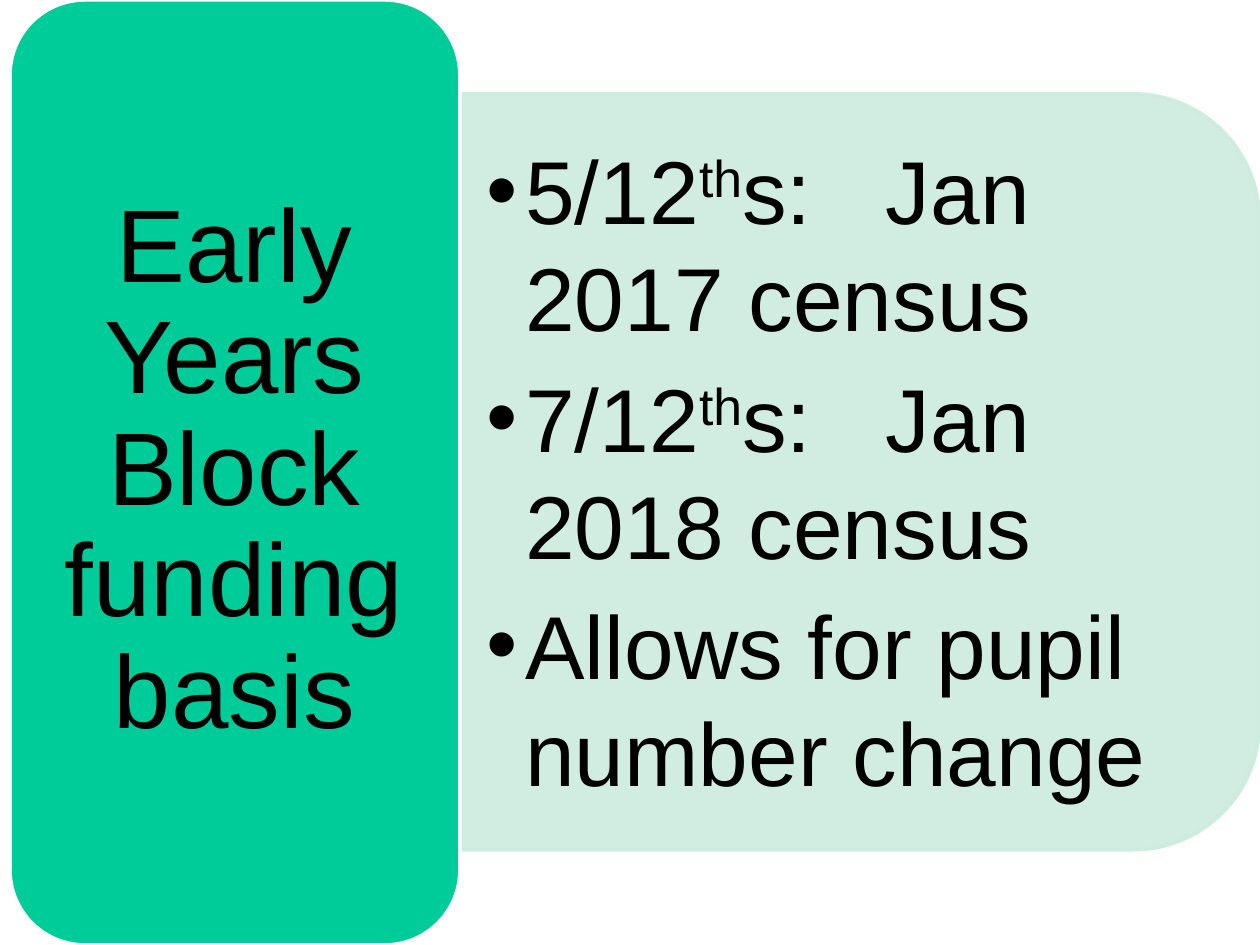
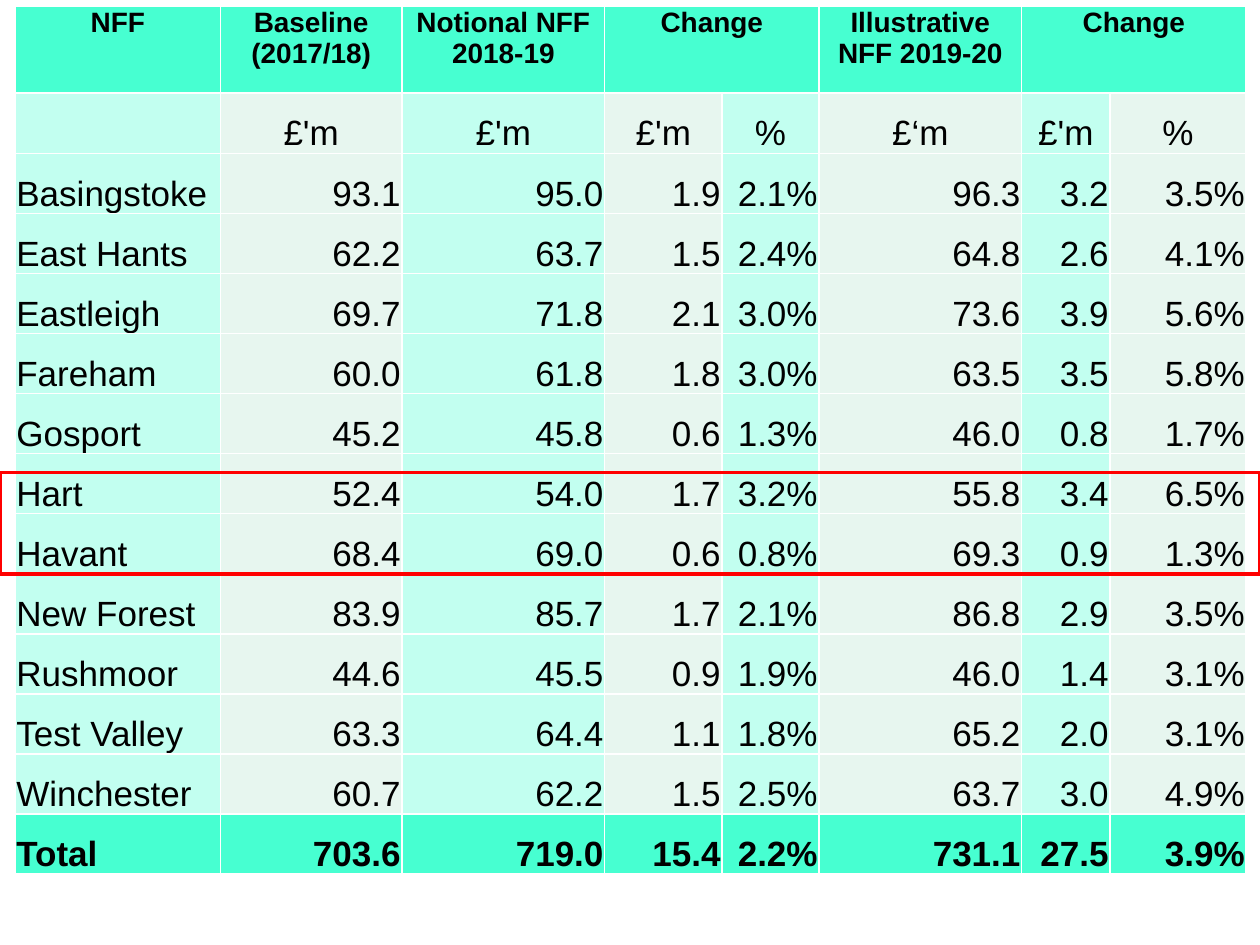
from lxml.etree import SubElement
from pptx import Presentation
from pptx.dml.color import RGBColor
from pptx.enum.shapes import MSO_SHAPE
from pptx.enum.text import MSO_ANCHOR, MSO_AUTO_SIZE, PP_ALIGN
from pptx.oxml import parse_xml
from pptx.oxml.ns import nsdecls, qn
from pptx.util import Inches, Pt

FONT = "Arial"
COLORS = {
    "text": "000000", "white": "FFFFFF", "green": "00CC99", "panel": "CCECDE",
    "strong": "47FFD1", "mint": "C2FFF0", "pale": "E7F6EF", "highlight": "FF0000",
}

BASIS_TITLE = "Early Years Block funding basis"
# Each point is a list of (text, is_superscript) pieces
BASIS_POINTS = [
    [("5/12", False), ("th", True), ("s:\tJan 2017 census", False)],
    [("7/12", False), ("th", True), ("s:\tJan 2018 census", False)],
    [("Allows for pupil number change", False)],
]

HEADINGS = ["NFF", "Baseline (2017/18)", "Notional NFF 2018-19", "Change", "",
            "Illustrative NFF 2019-20", "Change", ""]
CHANGE_COLUMNS = [3, 6]
UNITS = ["", "£'m", "£'m", "£'m", "%", "£‘m", "£'m", "%"]
DISTRICTS = [
    ["Basingstoke", "93.1", "95.0", "1.9", "2.1%", "96.3", "3.2", "3.5%"],
    ["East Hants", "62.2", "63.7", "1.5", "2.4%", "64.8", "2.6", "4.1%"],
    ["Eastleigh", "69.7", "71.8", "2.1", "3.0%", "73.6", "3.9", "5.6%"],
    ["Fareham", "60.0", "61.8", "1.8", "3.0%", "63.5", "3.5", "5.8%"],
    ["Gosport", "45.2", "45.8", "0.6", "1.3%", "46.0", "0.8", "1.7%"],
    ["Hart", "52.4", "54.0", "1.7", "3.2%", "55.8", "3.4", "6.5%"],
    ["Havant", "68.4", "69.0", "0.6", "0.8%", "69.3", "0.9", "1.3%"],
    ["New Forest", "83.9", "85.7", "1.7", "2.1%", "86.8", "2.9", "3.5%"],
    ["Rushmoor", "44.6", "45.5", "0.9", "1.9%", "46.0", "1.4", "3.1%"],
    ["Test Valley", "63.3", "64.4", "1.1", "1.8%", "65.2", "2.0", "3.1%"],
    ["Winchester", "60.7", "62.2", "1.5", "2.5%", "63.7", "3.0", "4.9%"],
]
TOTAL = ["Total", "703.6", "719.0", "15.4", "2.2%", "731.1", "27.5", "3.9%"]
FUNDING_ROWS = [HEADINGS, UNITS, *DISTRICTS, TOTAL]
COLUMN_WIDTHS = [1.63, 1.44, 1.61, 0.93, 0.77, 1.61, 0.7, 1.08]
TABLE_LEFT, TABLE_TOP, TABLE_HEIGHT = 0.12, 0.05, 6.89
HEADING_HEIGHT = 0.69
ROW_HEIGHT = (TABLE_HEIGHT - HEADING_HEIGHT) / (len(FUNDING_ROWS) - 1)
HIGHLIGHT_TOP = 3.75
LAST_HIGHLIGHTED = "Havant"


def rgb(name):
    return RGBColor.from_string(COLORS[name])


def inches(*values):
    return [Inches(value) for value in values]


def style_font(font, size, bold=False):
    font.name, font.size, font.bold = FONT, Pt(size), bold
    font.color.rgb = rgb("text")


def add_box(slide, preset, place, fill, line):
    box = slide.shapes.add_shape(preset, *inches(*place))
    box.shadow.inherit = False
    if fill:
        box.fill.solid()
        box.fill.fore_color.rgb = rgb(fill)
    else:
        box.fill.background()
    box.line.color.rgb = rgb(line)
    box.line.width = Pt(2)
    return box


def place_text(holder, place, margins):
    """Move a placeholder and return its text frame, centred vertically."""
    holder.left, holder.top, holder.width, holder.height = inches(*place)
    frame = holder.text_frame
    frame.word_wrap, frame.auto_size = True, MSO_AUTO_SIZE.NONE
    frame.vertical_anchor = MSO_ANCHOR.MIDDLE
    (frame.margin_left, frame.margin_top,
     frame.margin_right, frame.margin_bottom) = inches(*margins)
    return frame


def build_basis_slide(deck):
    slide = deck.slides.add_slide(deck.slide_layouts[1])

    panel = add_box(slide, MSO_SHAPE.ROUND_2_SAME_RECTANGLE,
                    (3.82, 0.57, 6, 6.35), "panel", "panel")
    panel.rotation = 90
    for color in panel.element.spPr.iter(qn("a:srgbClr")):
        SubElement(color, qn("a:alpha"), val="90000")
    label = add_box(slide, MSO_SHAPE.ROUNDED_RECTANGLE,
                    (0.08, 0, 3.57, 7.5), "green", "white")
    # The text placeholders stay in front of both boxes
    for depth, box in enumerate((panel, label), start=2):
        slide.shapes.element.insert(depth, box.element)

    frame = place_text(slide.shapes.title, (0.25, 0.17, 3.22, 7.15),
                       (0.25, 0.12, 0.25, 0.12))
    frame.text = BASIS_TITLE
    title = frame.paragraphs[0]
    title.alignment, title.line_spacing = PP_ALIGN.CENTER, 0.9
    style_font(title.runs[0].font, 59)

    frame = place_text(slide.placeholders[1], (3.65, 1.04, 6.06, 5.41),
                       (0.21, 0.08, 0.21, 0.11))
    for index, pieces in enumerate(BASIS_POINTS):
        point = frame.add_paragraph() if index else frame.paragraphs[0]
        properties = point._p.get_or_add_pPr()
        properties.set("marL", str(Inches(0.31)))
        properties.set("indent", str(-Inches(0.31)))
        SubElement(properties, qn("a:buChar"), char="•")
        tabs = SubElement(properties, qn("a:tabLst"))
        SubElement(tabs, qn("a:tab"), pos=str(Inches(3.17)), algn="l")
        point.line_spacing = 1.0
        point.space_before, point.space_after = Pt(0), Pt(7.5)
        for text, is_superscript in pieces:
            run = point.add_run()
            run.text = text
            style_font(run.font, 51)
            if is_superscript:
                run.font._element.set("baseline", "30000")


def add_borders(cell):
    properties = cell._tc.get_or_add_tcPr()
    for position, side in enumerate(("lnL", "lnR", "lnT", "lnB")):
        properties.insert(position, parse_xml(
            f'<a:{side} {nsdecls("a")} w="{Pt(1)}"><a:solidFill>'
            f'<a:srgbClr val="{COLORS["white"]}"/></a:solidFill></a:{side}>'))


def build_funding_slide(deck):
    slide = deck.slides.add_slide(deck.slide_layouts[6])
    table = slide.shapes.add_table(
        len(FUNDING_ROWS), len(COLUMN_WIDTHS),
        *inches(TABLE_LEFT, TABLE_TOP, sum(COLUMN_WIDTHS), TABLE_HEIGHT)).table
    table.first_row = table.horz_banding = False
    for column, width in zip(table.columns, COLUMN_WIDTHS):
        column.width = Inches(width)

    for r, values in enumerate(FUNDING_ROWS):
        is_heading = values is HEADINGS
        is_strong = is_heading or values is TOTAL
        table.rows[r].height = Inches(HEADING_HEIGHT if is_heading else ROW_HEIGHT)
        for c, value in enumerate(values):
            cell = table.cell(r, c)
            cell.fill.solid()
            cell.fill.fore_color.rgb = rgb(
                "strong" if is_strong else ("mint", "pale")[c % 2])
            add_borders(cell)
            cell.margin_left = cell.margin_right = cell.margin_top = Inches(0.01)
            cell.margin_bottom = 0
            cell.vertical_anchor = MSO_ANCHOR.TOP if is_heading else MSO_ANCHOR.BOTTOM
            if not value:
                continue
            cell.text_frame.text = value
            paragraph = cell.text_frame.paragraphs[0]
            if is_heading or values is UNITS:
                paragraph.alignment = PP_ALIGN.CENTER
            else:
                paragraph.alignment = PP_ALIGN.RIGHT if c else PP_ALIGN.LEFT
            style_font(paragraph.runs[0].font, 16 if is_heading else 20, is_strong)
    for c in CHANGE_COLUMNS:
        table.cell(0, c).merge(table.cell(0, c + 1))

    # The highlight ends on the lower edge of its last row
    rows_above = [values[0] for values in FUNDING_ROWS].index(LAST_HIGHLIGHTED)
    highlight_bottom = TABLE_TOP + HEADING_HEIGHT + rows_above * ROW_HEIGHT
    add_box(slide, MSO_SHAPE.RECTANGLE,
            (0, HIGHLIGHT_TOP, 10, highlight_bottom - HIGHLIGHT_TOP),
            None, "highlight")


def main():
    deck = Presentation()
    deck.slide_width, deck.slide_height = inches(10, 7.5)
    build_basis_slide(deck)
    build_funding_slide(deck)
    deck.save("out.pptx")


if __name__ == "__main__":
    main()
